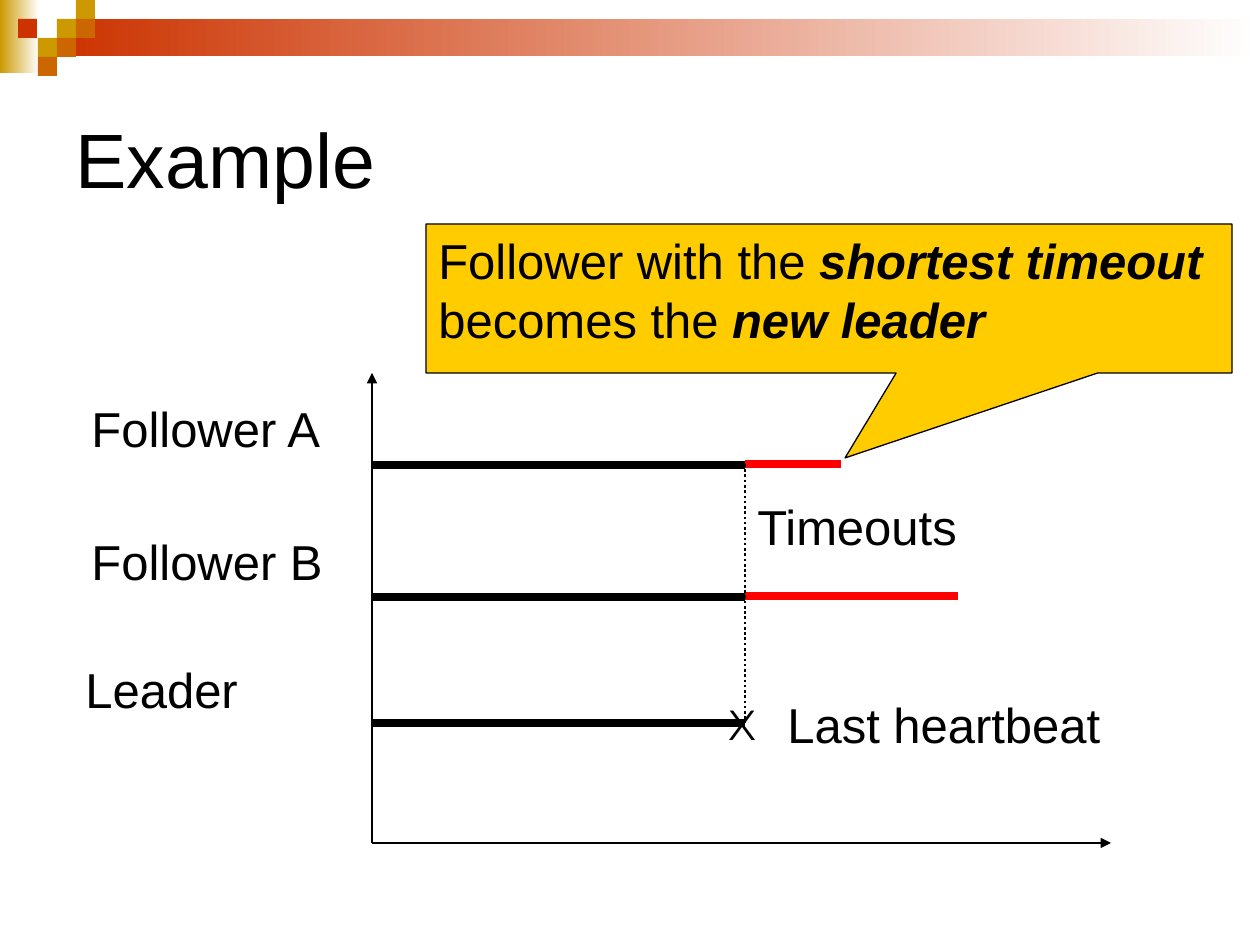
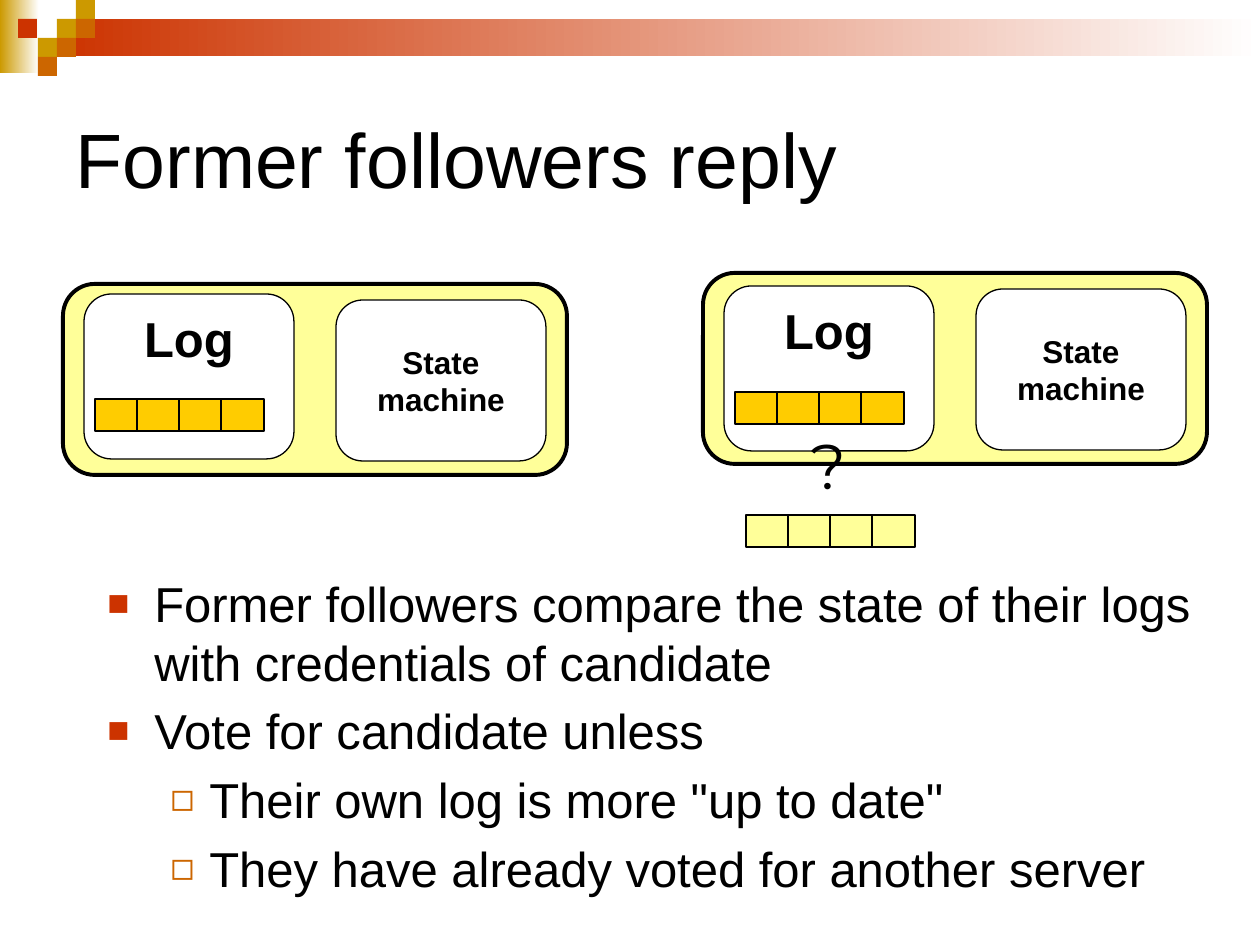
from lxml import etree
from pptx import Presentation
from pptx.dml.color import RGBColor
from pptx.enum.dml import MSO_LINE
from pptx.enum.shapes import MSO_CONNECTOR, MSO_SHAPE
from pptx.enum.text import MSO_ANCHOR, MSO_AUTO_SIZE, PP_ALIGN
from pptx.oxml.ns import qn
from pptx.util import Pt

BLACK = RGBColor(0x00, 0x00, 0x00)
WHITE = RGBColor(0xFF, 0xFF, 0xFF)
RED = RGBColor(0xFF, 0x00, 0x00)
RUST = RGBColor(0xCC, 0x33, 0x00)
ORANGE = RGBColor(0xCC, 0x66, 0x00)
OCHRE = RGBColor(0xCC, 0x99, 0x00)
AMBER = RGBColor(0xFF, 0xCC, 0x00)
PALE = RGBColor(0xFF, 0xFF, 0x99)
SANS, DISPLAY = "Arial", "Montserrat"
PX_PER_INCH = 126

BANDS = [((0, 0, 39, 73), OCHRE), ((57, 19, 1203, 37), RUST)]
TILE = 19
TILES = [(57, 19, OCHRE), (76, 0, OCHRE), (76, 19, ORANGE), (38, 38, OCHRE),
         (18, 19, RUST), (57, 38, ORANGE), (38, 57, ORANGE)]

AXIS_X, AXIS_Y, AXIS_TOP, AXIS_RIGHT = 372, 843, 373, 1111
HEARTBEAT_X = 745
TIMELINES = [(465, 841), (597, 958), (723, None)]
CHART_LABELS = [
    ("Follower A", (79, 392, 257, 72), 28, SANS),
    ("Follower B", (79, 525, 257, 72), 28, SANS),
    ("Leader", (73, 653, 179, 72), 28, SANS),
    ("Last heartbeat", (775, 688, 339, 72), 28, SANS),
    ("X", (716, 692, 58, 63), 24, DISPLAY),
    ("Timeouts", (745, 490, 227, 72), 28, SANS),
]
CALLOUT = [[("Follower with the ", False), ("shortest timeout", True)],
           [("becomes the ", False), ("new leader", True)]]

SERVERS = [
    {"left": 63, "top": 284, "log_y": 10, "cell_y": 115},
    {"left": 703, "top": 273, "log_y": 13, "cell_y": 119},
]
CANDIDATE_LOG = (746, 515)
CELL_COUNT, CELL_PITCH, CELL_W, CELL_H = 4, 42, 43, 32
BULLETS = [
    (0, "Former followers compare the state of their logs with credentials of candidate"),
    (0, "Vote for candidate unless"),
    (1, 'Their own log is more "up to date"'),
    (1, "They have already voted for another server"),
]
BULLET_STYLES = [("■", RUST, 75, 47, 47), ("◻", ORANGE, 80, 102, 39)]


def px(n):
    return round(n * 914400 / PX_PER_INCH)


def box(rect):
    return [px(n) for n in rect]


def write(p, text, size, font=SANS, bold=False, italic=False):
    r = p.add_run()
    r.text = text
    r.font.size = Pt(size)
    r.font.name = font
    r.font.bold = bold
    r.font.italic = italic
    r.font.color.rgb = BLACK


def add_box(s, kind, rect, fill, line=0.75):
    sp = s.shapes.add_shape(kind, *box(rect))
    sp.shadow.inherit = False
    sp.fill.solid()
    sp.fill.fore_color.rgb = fill
    if line:
        sp.line.color.rgb = BLACK
        sp.line.width = Pt(line)
    else:
        sp.line.fill.background()
    return sp


def add_line(s, start, end, color=BLACK, width=0.75, dash=None, arrow=False):
    c = s.shapes.add_connector(MSO_CONNECTOR.STRAIGHT, *box(start + end))
    c.line.color.rgb = color
    c.line.width = Pt(width)
    if dash:
        c.line.dash_style = dash
    if arrow:
        etree.SubElement(c.line._get_or_add_ln(), qn("a:tailEnd"), type="triangle")
    etree.SubElement(c._element.spPr, qn("a:effectLst"))


def add_label(s, text, rect, size, font):
    tf = s.shapes.add_textbox(*box(rect)).text_frame
    tf.word_wrap = False
    tf.auto_size = MSO_AUTO_SIZE.SHAPE_TO_FIT_TEXT
    write(tf.paragraphs[0], text, size, font)


def add_slide(prs, title, title_width):
    s = prs.slides.add_slide(prs.slide_layouts[5])
    for rect, color in BANDS:
        sp = add_box(s, MSO_SHAPE.RECTANGLE, rect, color, line=0)
        sp.fill.gradient()
        sp.fill.gradient_angle = 0
        for stop, rgb in zip(sp.fill.gradient_stops, (color, WHITE)):
            stop.color.rgb = rgb
    for x, y, color in TILES:
        add_box(s, MSO_SHAPE.RECTANGLE, (x, y, TILE, TILE), color, line=0)
    sp = s.shapes.title
    sp.left, sp.top, sp.width, sp.height = box((63, 63, title_width, 189))
    tf = sp.text_frame
    tf.vertical_anchor = MSO_ANCHOR.MIDDLE
    tf.paragraphs[0].alignment = PP_ALIGN.LEFT
    write(tf.paragraphs[0], title, 44)
    return s


def add_callout(s):
    sp = add_box(s, MSO_SHAPE.RECTANGULAR_CALLOUT, (426, 224, 806, 149), AMBER)
    sp.adjustments[0], sp.adjustments[1] = 0.02, 1.07
    tf = sp.text_frame
    tf.vertical_anchor = MSO_ANCHOR.TOP
    p = tf.paragraphs[0]
    p.alignment = PP_ALIGN.LEFT
    for i, parts in enumerate(CALLOUT):
        if i:
            p.add_line_break()
        for text, strong in parts:
            write(p, text, 28, bold=strong, italic=strong)


def add_panel(s, rect, lines, size, anchor):
    tf = add_box(s, MSO_SHAPE.ROUNDED_RECTANGLE, rect, WHITE).text_frame
    tf.word_wrap = False
    tf.vertical_anchor = anchor
    for i, text in enumerate(lines):
        p = tf.add_paragraph() if i else tf.paragraphs[0]
        p.alignment = PP_ALIGN.CENTER
        write(p, text, size, bold=True)


def add_cells(s, left, top, fill):
    for i in range(CELL_COUNT):
        add_box(s, MSO_SHAPE.RECTANGLE,
                (left + i * CELL_PITCH, top, CELL_W, CELL_H), fill)


def add_server(s, left, top, log_y, cell_y):
    add_box(s, MSO_SHAPE.ROUNDED_RECTANGLE, (left, top, 504, 191), PALE, 2.25)
    add_panel(s, (left + 273, top + 16, 210, 161), ["State", "machine"], 18,
              MSO_ANCHOR.MIDDLE)
    add_panel(s, (left + 21, top + log_y, 210, 165), ["Log"], 28, MSO_ANCHOR.TOP)
    add_cells(s, left + 32, top + cell_y, AMBER)


def add_bullets(s):
    tf = s.shapes.add_textbox(*box((95, 567, 1134, 347))).text_frame
    tf.word_wrap = True
    for i, (level, text) in enumerate(BULLETS):
        char, color, percent, margin, hang = BULLET_STYLES[level]
        p = tf.add_paragraph() if i else tf.paragraphs[0]
        p.level = level
        p.space_before = Pt(5.6)
        pPr = p._p.get_or_add_pPr()
        pPr.set("marL", str(px(margin)))
        pPr.set("indent", str(-px(hang)))
        clr = etree.SubElement(pPr, qn("a:buClr"))
        etree.SubElement(clr, qn("a:srgbClr"), val=str(color))
        etree.SubElement(pPr, qn("a:buSzPct"), val=str(percent * 1000))
        etree.SubElement(pPr, qn("a:buFont"), typeface=SANS)
        etree.SubElement(pPr, qn("a:buChar"), char=char)
        write(p, text, 28)


def build_example(prs):
    s = add_slide(prs, "Example", 1134)
    origin = (AXIS_X, AXIS_Y)
    add_line(s, origin, (AXIS_X, AXIS_TOP), arrow=True)
    add_line(s, origin, (AXIS_RIGHT, AXIS_Y), arrow=True)
    for y, timeout_x in TIMELINES:
        add_line(s, (AXIS_X, y), (HEARTBEAT_X, y), width=4.5)
        if timeout_x:
            add_line(s, (HEARTBEAT_X, y - 1), (timeout_x, y - 1), RED, 4.5)
    for label in CHART_LABELS:
        add_label(s, *label)
    add_callout(s)
    add_line(s, (HEARTBEAT_X, TIMELINES[0][0] - 1), (HEARTBEAT_X, TIMELINES[-1][0]),
             width=1.5, dash=MSO_LINE.ROUND_DOT)


def build_reply(prs):
    s = add_slide(prs, "Former followers reply", 1197)
    add_bullets(s)
    for server in SERVERS:
        add_server(s, **server)
    add_cells(s, *CANDIDATE_LOG, PALE)
    add_label(s, "?", (798, 420, 64, 88), 36, DISPLAY)


def main():
    prs = Presentation()
    prs.slide_width, prs.slide_height = box((1260, 945))
    build_example(prs)
    build_reply(prs)
    prs.save("out.pptx")


if __name__ == "__main__":
    main()
